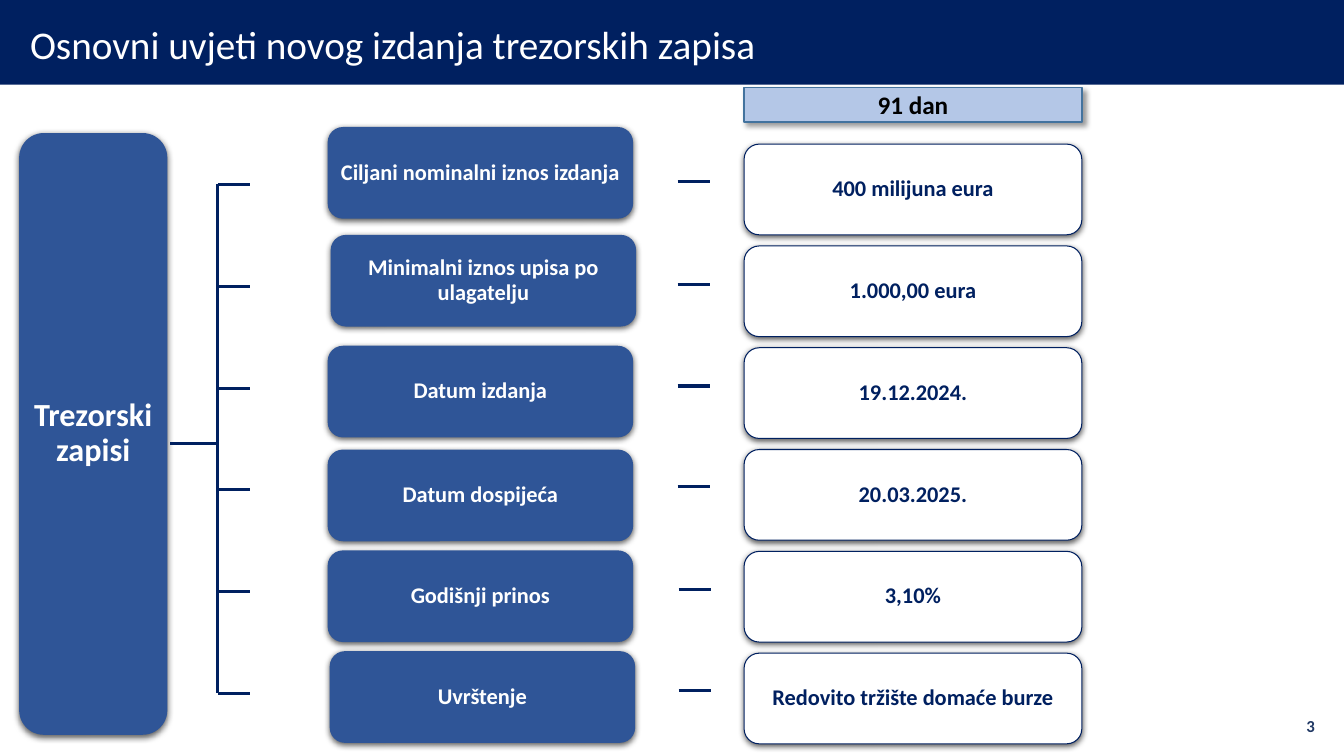
import dataclasses
import typing

import lxml.etree
import pptx
import pptx.dml.color
import pptx.enum.shapes
import pptx.enum.text
import pptx.oxml.ns
import pptx.util

Inches = pptx.util.Inches
Pt = pptx.util.Pt
RGB = pptx.dml.color.RGBColor
Kind = pptx.enum.shapes.MSO_SHAPE
Align = pptx.enum.text.PP_ALIGN
qn = pptx.oxml.ns.qn

NAVY = RGB(0x00, 0x20, 0x60)
BLUE = RGB(0x2F, 0x55, 0x97)
PALE = RGB(0xB4, 0xC7, 0xE7)
STEEL = RGB(0x43, 0x73, 0x9E)
DARK = RGB(0x20, 0x38, 0x64)
WHITE = RGB(0xFF, 0xFF, 0xFF)
BLACK = RGB(0x00, 0x00, 0x00)


@dataclasses.dataclass(frozen=True)
class Shade:
    alpha: int
    blur: float
    dist: float
    angle: int


@dataclasses.dataclass(frozen=True)
class Look:
    kind: Kind
    fill: RGB
    ink: RGB
    size: int
    inset: float
    shade: Shade
    edge: typing.Optional[RGB] = None
    width: float = 0.75
    space: float = 0.9


@dataclasses.dataclass(frozen=True)
class Row:
    label: str
    value: str
    left: float
    top: float
    dash: float
    level: float


SOFT = Shade(63, 4.5, 1.5, 90)
ROOT = Look(Kind.ROUNDED_RECTANGLE, BLUE, WHITE, 23, 0.02, SOFT)
LABEL = Look(Kind.ROUNDED_RECTANGLE, BLUE, WHITE, 16, 0.01, SOFT)
VALUE = Look(Kind.ROUNDED_RECTANGLE, WHITE, NAVY, 16, 0.01, SOFT, NAVY)
HEAD = Look(Kind.RECTANGLE, PALE, BLACK, 18, 0.05, Shade(40, 4, 3, 45),
            STEEL, 1, 1.0)

ROWS = [
    Row("Ciljani nominalni iznos izdanja", "400 milijuna eura",
        3.25, 1.26, 6.72, 1.8),
    Row("Minimalni iznos upisa po ulagatelju", "1.000,00 eura",
        3.28, 2.33, 6.72, 2.82),
    Row("Datum izdanja", "19.12.2024.", 3.25, 3.43, 6.72, 3.83),
    Row("Datum dospijeća", "20.03.2025.", 3.25, 4.46, 6.72, 4.83),
    Row("Godišnji prinos", "3,10%", 3.25, 5.46, 6.73, 5.85),
    Row("Uvrštenje", "Redovito tržište domaće burze",
        3.27, 6.46, 6.73, 6.85),
]
STEP = 1.01
TRUNK = 2.16
FIRST = 1.83
STUB = 0.32


def write(shape, text: str, size: int, ink: RGB, bold: bool,
          align: Align, space: float = 1.0) -> None:
    frame = shape.text_frame
    frame.word_wrap = True
    frame.vertical_anchor = pptx.enum.text.MSO_ANCHOR.MIDDLE
    para = frame.paragraphs[0]
    para.text = text
    para.alignment = align
    para.line_spacing = space
    font = para.font
    font.name, font.size, font.bold = "Calibri", Pt(size), bold
    font.color.rgb = ink


def cast(shape, shade: Shade) -> None:
    """Give the shape an outer shadow."""
    shape.shadow.inherit = False
    effects = shape._element.spPr.find(qn("a:effectLst"))
    outer = lxml.etree.SubElement(
        effects, qn("a:outerShdw"), blurRad=str(Pt(shade.blur)),
        dist=str(Pt(shade.dist)), dir=str(shade.angle * 60000),
        algn="ctr", rotWithShape="0")
    color = lxml.etree.SubElement(outer, qn("a:srgbClr"), val=str(BLACK))
    lxml.etree.SubElement(color, qn("a:alpha"), val=str(shade.alpha * 1000))


def block(slide, look: Look, text: str, left: float, top: float,
          width: float, height: float) -> None:
    shape = slide.shapes.add_shape(
        look.kind, Inches(left), Inches(top), Inches(width), Inches(height))
    shape.fill.solid()
    shape.fill.fore_color.rgb = look.fill
    if look.edge is None:
        shape.line.fill.background()
    else:
        shape.line.color.rgb = look.edge
        shape.line.width = Pt(look.width)
    cast(shape, look.shade)
    frame = shape.text_frame
    frame.margin_left = frame.margin_right = Inches(look.inset)
    frame.margin_top = frame.margin_bottom = Inches(look.inset)
    write(shape, text, look.size, look.ink, True, Align.CENTER, look.space)


def rule(slide, x1: float, y1: float, x2: float, y2: float) -> None:
    line = slide.shapes.add_connector(
        pptx.enum.shapes.MSO_CONNECTOR.STRAIGHT,
        Inches(x1), Inches(y1), Inches(x2), Inches(y2))
    line.line.color.rgb = NAVY
    line.line.width = Pt(2.25)
    lxml.etree.SubElement(line._element.spPr, qn("a:effectLst"))


def banner(slide) -> None:
    bar = slide.shapes.add_shape(
        Kind.RECTANGLE, 0, 0, Inches(13.33), Inches(0.84))
    bar.fill.solid()
    bar.fill.fore_color.rgb = NAVY
    bar.line.fill.background()
    bar.shadow.inherit = False
    title = slide.shapes.add_textbox(
        Inches(0.2), Inches(0.11), Inches(11.5), Inches(0.71))
    write(title, "Osnovni uvjeti novog izdanja trezorskih zapisa",
          28, WHITE, False, Align.LEFT, 0.9)


def main() -> None:
    deck = pptx.Presentation()
    deck.slide_width, deck.slide_height = Inches(13.33), Inches(7.5)
    slide = deck.slides.add_slide(deck.slide_layouts[6])

    # Title bar and page number
    banner(slide)
    page = slide.shapes.add_textbox(
        Inches(12.7), Inches(7), Inches(0.44), Inches(0.4))
    write(page, "3", 12, DARK, True, Align.RIGHT)

    # Root and trunk of the tree
    block(slide, ROOT, "Trezorski zapisi", 0.19, 1.32, 1.47, 5.97)
    rule(slide, 1.69, 4.4, TRUNK, 4.4)
    rule(slide, TRUNK, FIRST, TRUNK, FIRST + STEP * (len(ROWS) - 1))

    # Terms and their values
    block(slide, HEAD, "91 dan", 7.38, 0.87, 3.35, 0.34)
    for i, row in enumerate(ROWS):
        shift = i * STEP
        rule(slide, TRUNK, FIRST + shift, TRUNK + STUB, FIRST + shift)
        block(slide, LABEL, row.label, row.left, row.top, 3.03, 0.91)
        rule(slide, row.dash, row.level, row.dash + STUB, row.level)
        block(slide, VALUE, row.value, 7.38, 1.43 + shift, 3.35, 0.9)

    deck.save("out.pptx")


if __name__ == "__main__":
    main()
